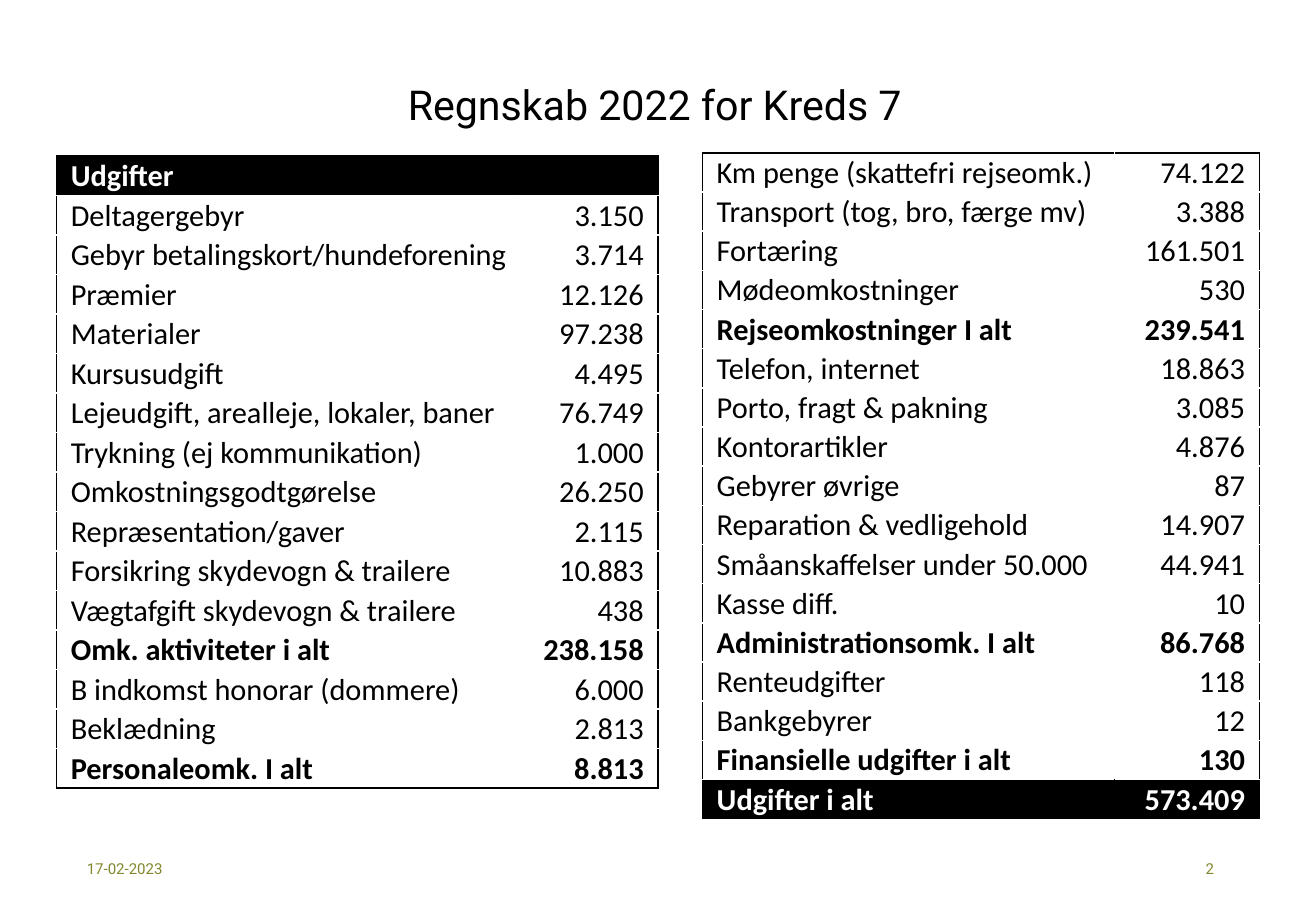
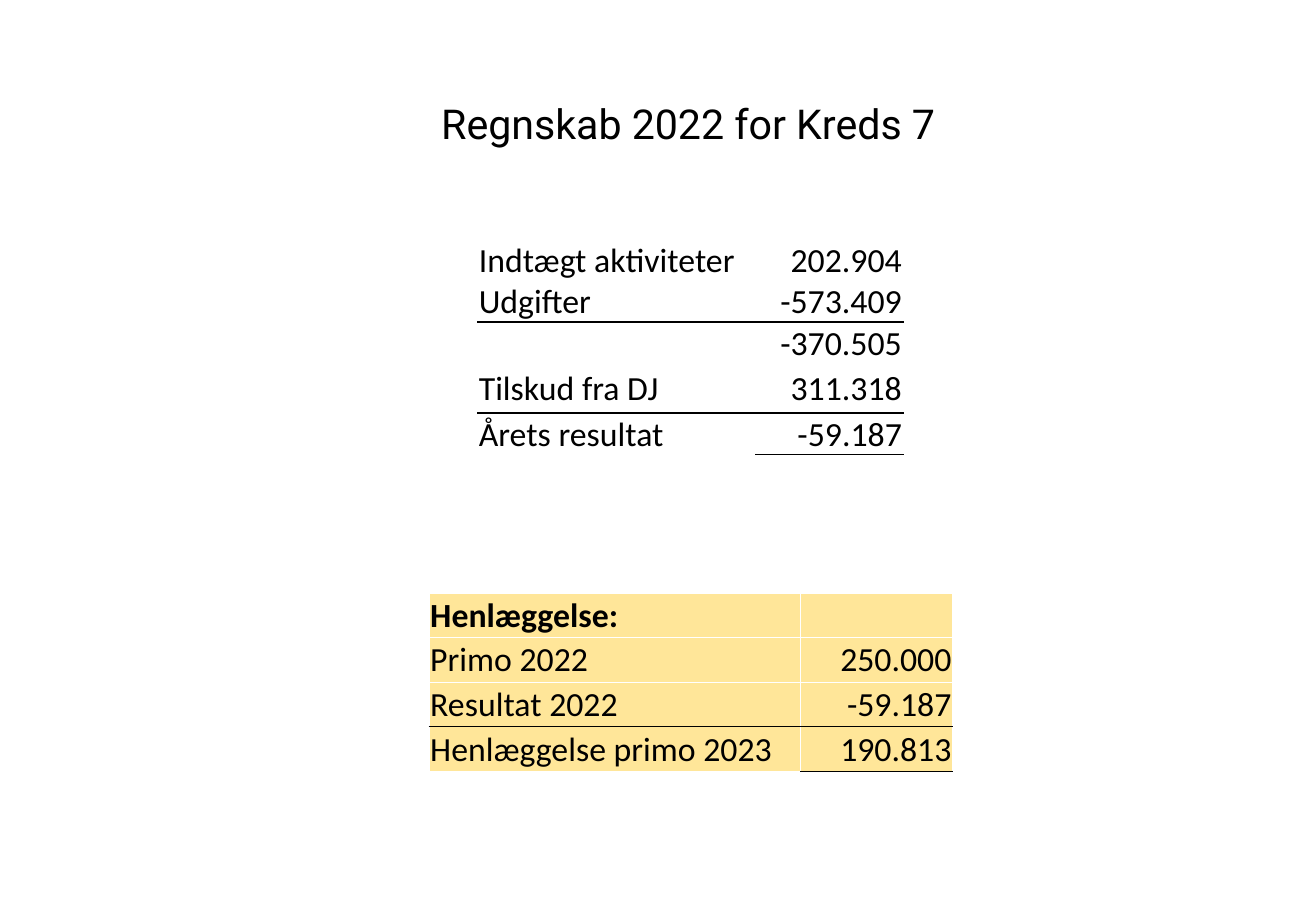
from dataclasses import dataclass, field
from typing import NamedTuple

from lxml.etree import SubElement
from pptx import Presentation
from pptx.dml.color import RGBColor
from pptx.enum.text import MSO_ANCHOR as Anchor, PP_ALIGN as Align
from pptx.oxml.ns import qn
from pptx.util import Pt

PX = 7620  # EMU per px, 120 px to the inch
HUES = {"ink": "000000", "paper": "FFFFFF", "olive": "83872D", "sand": "FFE699"}
HEAD, BODY = "Roboto", "Calibri"
TITLE = "Regnskab 2022 for Kreds 7"


class Box(NamedTuple):
    x: int
    y: int
    w: int
    h: int

    def emu(self) -> list[int]:
        return [v * PX for v in self]


class Row(NamedTuple):
    name: str
    sum: str = ""
    bold: bool = False
    fill: str = "paper"
    more: int = 0  # px added to the even row height


@dataclass
class Grid:
    box: Box
    split: int  # width of the first column
    rows: list[Row]
    size: int
    pad: int = 1  # inset at the outer sides
    frame: bool = False
    rules: set[tuple[int, int]] = field(default_factory=set)  # (line, column)

    def edges(self) -> tuple[set, set]:
        """Gives the inked horizontal and vertical cell edges."""
        flat, tall = set(self.rules), set()
        if self.frame:
            last = len(self.rows)
            flat |= {(n, c) for n in (0, last) for c in (0, 1)}
            tall = {(r, n) for r in range(last) for n in (0, 2)}
        tall |= {(r, 1) for r, row in enumerate(self.rows) if row.fill == "ink"}
        return flat, tall


def rgb(hue: str) -> RGBColor:
    return RGBColor.from_string(HUES[hue])


def style(para, face: str, size: float, hue: str, bold: bool = False) -> None:
    font = para.font
    font.name, font.size, font.bold = face, Pt(size), bold
    font.color.rgb = rgb(hue)


def label(slide, box: Box, text: str, size: float, hue: str,
          align: Align = Align.LEFT, lead: float = 1.0) -> None:
    frame = slide.shapes.add_textbox(*box.emu()).text_frame
    frame.word_wrap, frame.vertical_anchor = True, Anchor.MIDDLE
    para = frame.paragraphs[0]
    para.text, para.alignment, para.line_spacing = text, align, lead
    style(para, HEAD, size, hue)


def title(slide, x: int, y: int) -> None:
    label(slide, Box(x, y, 517, 89), TITLE, 24.4, "ink", lead=0.9)


def border(cell, inked: dict[str, bool]) -> None:
    props = cell._tc.get_or_add_tcPr()
    for side, dark in inked.items():
        line = SubElement(props, qn(f"a:ln{side}"), w=str(Pt(1)))
        fill = SubElement(line, qn("a:solidFill"))
        SubElement(fill, qn("a:srgbClr"), val=HUES["ink" if dark else "paper"])


def draw(slide, grid: Grid) -> None:
    rows, box = grid.rows, grid.box
    table = slide.shapes.add_table(len(rows), 2, *box.emu()).table
    table.first_row = table.horz_banding = False
    for col, wide in zip(table.columns, (grid.split, box.w - grid.split)):
        col.width = wide * PX
    even = (box.h - sum(row.more for row in rows)) * PX // len(rows)
    flat, tall = grid.edges()
    for r, row in enumerate(rows):
        table.rows[r].height = even + row.more * PX
        hue = "paper" if row.fill == "ink" else "ink"
        for c, text in enumerate((row.name, row.sum)):
            cell = table.cell(r, c)
            border(cell, {"L": (r, c) in tall, "R": (r, c + 1) in tall,
                          "T": (r, c) in flat, "B": (r + 1, c) in flat})
            cell.fill.solid()
            cell.fill.fore_color.rgb = rgb(row.fill)
            cell.vertical_anchor = Anchor.MIDDLE
            cell.margin_left = (1 if c else grid.pad) * PX
            cell.margin_right = (grid.pad if c else 1) * PX
            cell.margin_top, cell.margin_bottom = PX, 0
            para = cell.text_frame.paragraphs[0]
            para.text = text
            para.alignment = Align.RIGHT if c else Align.LEFT
            style(para, BODY, grid.size, hue, row.bold)


COSTS = Grid(Box(56, 154, 594, 625), 457, [
    Row("Udgifter", bold=True, fill="ink"),
    Row("Deltagergebyr", "3.150"),
    Row("Gebyr betalingskort/hundeforening", "3.714"),
    Row("Præmier", "12.126"),
    Row("Materialer", "97.238"),
    Row("Kursusudgift", "4.495"),
    Row("Lejeudgift, arealleje, lokaler, baner", "76.749"),
    Row("Trykning (ej kommunikation)", "1.000"),
    Row("Omkostningsgodtgørelse", "26.250"),
    Row("Repræsentation/gaver", "2.115"),
    Row("Forsikring skydevogn & trailere", "10.883"),
    Row("Vægtafgift skydevogn & trailere", "438"),
    Row("Omk. aktiviteter i alt", "238.158", True),
    Row("B indkomst honorar (dommere)", "6.000"),
    Row("Beklædning", "2.813"),
    Row("Personaleomk. I alt", "8.813", True),
], 18, pad=14, frame=True)

MORE = Grid(Box(694, 151, 550, 658), 407, [
    Row("Km penge (skattefri rejseomk.)", "74.122"),
    Row("Transport (tog, bro, færge mv)", "3.388"),
    Row("Fortæring", "161.501"),
    Row("Mødeomkostninger", "530"),
    Row("Rejseomkostninger I alt", "239.541", True),
    Row("Telefon, internet", "18.863"),
    Row("Porto, fragt & pakning", "3.085"),
    Row("Kontorartikler", "4.876"),
    Row("Gebyrer øvrige", "87"),
    Row("Reparation & vedligehold", "14.907"),
    Row("Småanskaffelser under 50.000", "44.941"),
    Row("Kasse diff.", "10"),
    Row("Administrationsomk. I alt", "86.768", True),
    Row("Renteudgifter", "118"),
    Row("Bankgebyrer", "12"),
    Row("Finansielle udgifter i alt", "130", True),
    Row("Udgifter i alt", "573.409", True, "ink"),
], 18, pad=14, frame=True)

RESULT = Grid(Box(472, 236, 420, 213), 275, [
    Row("Indtægt aktiviteter", "202.904"),
    Row("Udgifter", "-573.409"),
    Row("", "-370.505"),
    Row("Tilskud fra DJ", "311.318", more=8),
    Row("Årets resultat", "-59.187"),
], 20, rules={(2, 0), (2, 1), (4, 0), (4, 1), (5, 1)})

FUNDS = Grid(Box(424, 586, 517, 176), 367, [
    Row("Henlæggelse:", bold=True, fill="sand"),
    Row("Primo 2022", "250.000", fill="sand"),
    Row("Resultat 2022", "-59.187", fill="sand"),
    Row("Henlæggelse primo 2023", "190.813", fill="sand"),
], 20, rules={(3, 0), (3, 1), (4, 1)})


def main() -> None:
    deck = Presentation()
    deck.slide_width, deck.slide_height = 1300 * PX, 900 * PX
    blank = deck.slide_layouts[6]

    costs = deck.slides.add_slide(blank)
    label(costs, Box(74, 834, 132, 48), "17-02-2023", 8.9, "olive")
    label(costs, Box(1090, 834, 121, 48), "2", 8.9, "olive", Align.RIGHT)
    title(costs, 391, 61)
    draw(costs, COSTS)
    draw(costs, MORE)

    result = deck.slides.add_slide(blank)
    title(result, 424, 80)
    draw(result, RESULT)
    draw(result, FUNDS)
    deck.save("out.pptx")


if __name__ == "__main__":
    main()
